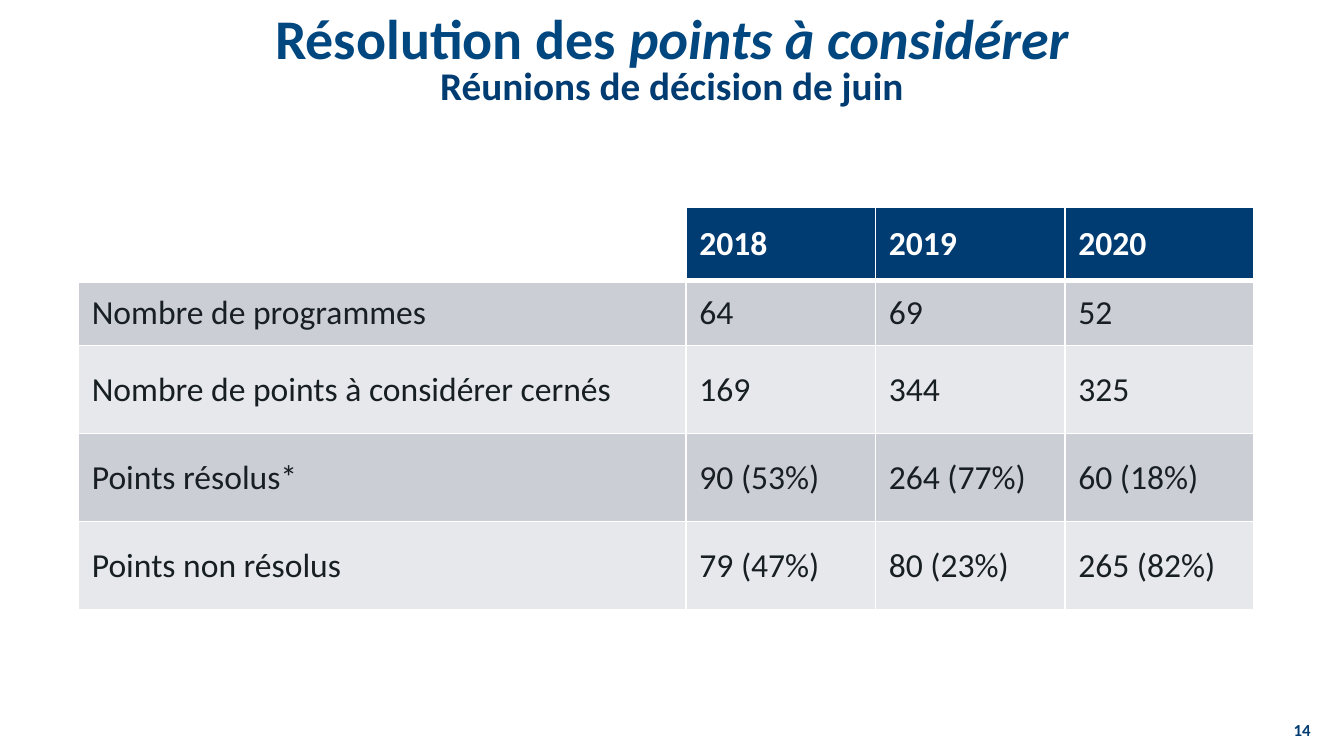
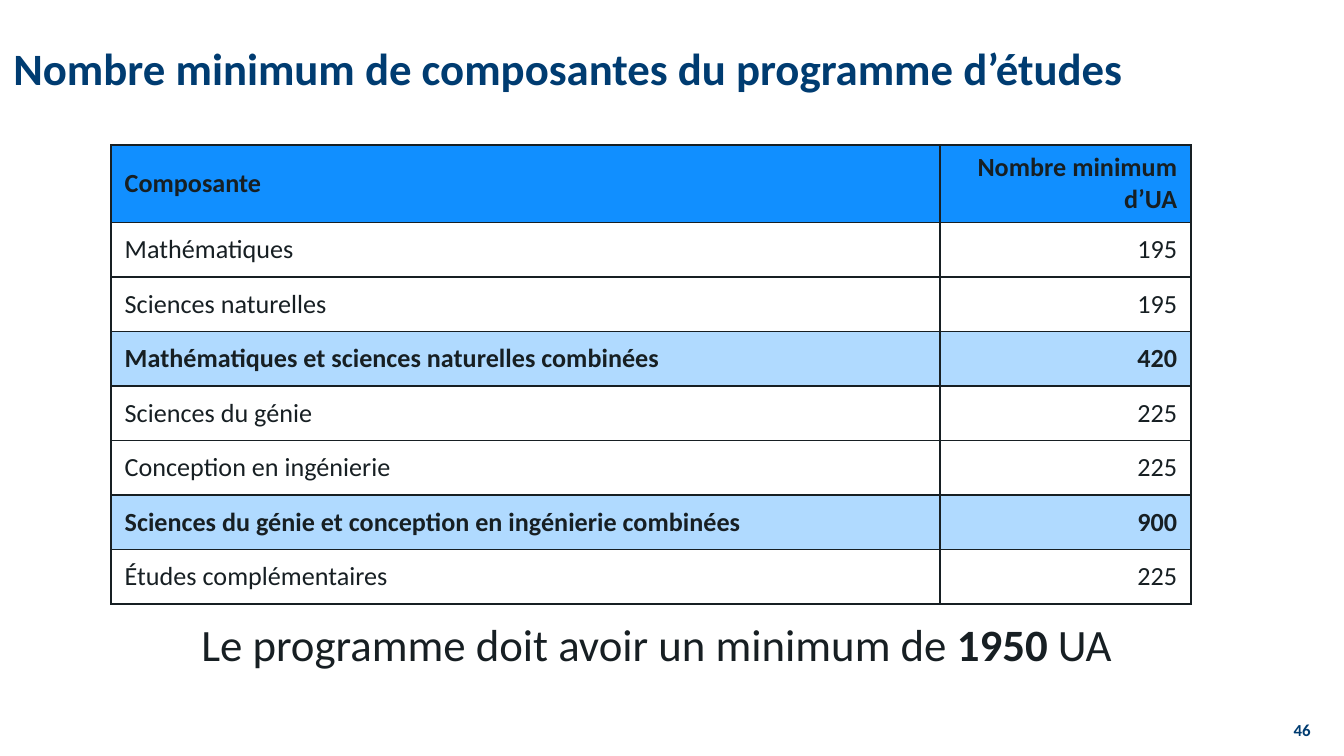
from lxml import etree
from pptx import Presentation
from pptx.dml.color import RGBColor
from pptx.enum.text import MSO_ANCHOR, MSO_AUTO_SIZE, PP_ALIGN
from pptx.oxml.ns import qn
from pptx.util import Pt

LEFT, CENTER, RIGHT = PP_ALIGN.LEFT, PP_ALIGN.CENTER, PP_ALIGN.RIGHT
TOP, MIDDLE = MSO_ANCHOR.TOP, MSO_ANCHOR.MIDDLE
FIXED = MSO_AUTO_SIZE.NONE
TITLE_ONLY, TITLE_BODY = 5, 1

COLORS = {
    "navy": "003C71", "blue": "00467F", "ink": "171F23", "white": "FFFFFF",
    "dark": "CCCED5", "light": "E7E8EB", "bright": "118FFF", "pale": "B0DAFF",
}
FONT = "Calibri"


def rgb(name):
    return RGBColor.from_string(COLORS[name])


class Deck:
    def __init__(self):
        self.prs = Presentation()
        self.prs.slide_width, self.prs.slide_height = Pt(720), Pt(405)
        self.slide = None

    def start(self, layout, number):
        self.slide = self.prs.slides.add_slide(self.prs.slide_layouts[layout])
        box = self.slide.shapes.add_textbox(0, 0, 0, 0)
        look = {"size": 9, "color": "navy", "bold": True}
        self.fill(box, (683.3, 385.2, 25.9, 11.5), [[(number, look)]], RIGHT)
        box.text_frame.margin_top = box.text_frame.margin_bottom = 0

    def line(self, par, runs, align=LEFT, gap=None):
        """Set runs of (text, look) in a paragraph."""
        form = {"alignment": align, "line_spacing": gap,
                "space_before": Pt(0), "space_after": Pt(0)}
        for key, value in form.items():
            setattr(par, key, value)
        for text, look in runs:
            run = par.add_run()
            run.text = text
            font = {"name": FONT, "bold": False, "italic": False, **look}
            font["size"] = Pt(font["size"])
            run.font.color.rgb = rgb(font.pop("color"))
            for key, value in font.items():
                setattr(run.font, key, value)

    def fill(self, shape, box, lines, align, gap=None, anchor=MIDDLE):
        """Place a shape and set one paragraph per line."""
        for key, value in zip(("left", "top", "width", "height"), box):
            setattr(shape, key, Pt(value))
        frame = shape.text_frame
        form = {"word_wrap": True, "auto_size": FIXED, "vertical_anchor": anchor}
        for key, value in form.items():
            setattr(frame, key, value)
        for i, runs in enumerate(lines):
            par = frame.add_paragraph() if i else frame.paragraphs[0]
            self.line(par, runs, align, gap)

    def title(self, box, lines, align, gap):
        self.fill(self.slide.shapes.title, box, lines, align, gap)

    def body(self, box, runs):
        shape = self.slide.placeholders[1]
        prop = shape.text_frame.paragraphs[0]._p.get_or_add_pPr()
        prop.set("marL", "0")
        prop.set("indent", "0")
        etree.SubElement(prop, qn("a:buNone"))
        self.fill(shape, box, [runs], CENTER, 1.14, TOP)

    def border(self, cell, color, widths):
        """Draw the left, right, top and bottom lines of a cell."""
        prop = cell._tc.get_or_add_tcPr()
        for side, width in zip("LRTB", widths):
            edge = etree.SubElement(prop, qn("a:ln" + side), w=str(Pt(width)))
            paint = etree.SubElement(edge, qn("a:solidFill"))
            etree.SubElement(paint, qn("a:srgbClr"), val=COLORS[color])

    def table(self, spot, cols, rows, aligns, edge, rule=1):
        """Rows are (height, fill, look, texts); rule is the line under the head."""
        high = sum(row[0] for row in rows)
        grid = self.slide.shapes.add_table(
            len(rows), len(cols), Pt(spot[0]), Pt(spot[1]),
            Pt(sum(cols)), Pt(high)).table
        grid.first_row = grid.horz_banding = False
        for col, width in zip(grid.columns, cols):
            col.width = Pt(width)
        for i, (height, tint, look, texts) in enumerate(rows):
            grid.rows[i].height = Pt(height)
            for j, text in enumerate(texts):
                cell = grid.cell(i, j)
                cell.vertical_anchor = MIDDLE
                over, under = (rule if i == k else 1 for k in (1, 0))
                self.border(cell, edge, (1, 1, over, under))
                if tint and text:
                    cell.fill.solid()
                    cell.fill.fore_color.rgb = rgb(tint)
                else:
                    cell.fill.background()
                runs = [(text, look)] if text else []
                self.line(cell.text_frame.paragraphs[0], runs, aligns[j])


def points(deck):
    deck.start(TITLE_ONLY, "14")
    head = {"size": 30, "color": "blue", "bold": True}
    sub = {"size": 21, "color": "navy", "bold": True}
    deck.title((54, 4.3, 612, 58.3), [
        [("Résolution des ", head),
         ("points à considérer", {**head, "italic": True})],
        [("Réunions de décision de juin", sub)],
    ], CENTER, 0.8)
    top = {"size": 18, "color": "white", "bold": True}
    text = {"size": 18, "color": "ink"}
    data = [
        ("Nombre de programmes", "64", "69", "52"),
        ("Nombre de points à considérer cernés", "169", "344", "325"),
        ("Points résolus*", "90 (53%)", "264 (77%)", "60 (18%)"),
        ("Points non résolus", "79 (47%)", "80 (23%)", "265 (82%)"),
    ]
    rows = [(38.9, "navy", top, ("", "2018", "2019", "2020"))]
    for i, texts in enumerate(data):
        tint = "light" if i % 2 else "dark"
        rows.append((47.2 if i else 35, tint, text, texts))
    deck.table((42, 111.2), [325.5] + [101.5] * 3, rows, [LEFT] * 4, "white", 3)


def units(deck):
    deck.start(TITLE_BODY, "46")
    head = {"size": 24, "color": "navy", "bold": True}
    deck.title((0, 4.3, 720, 67.7), [
        [("Nombre minimum de composantes du programme d’études", head)],
    ], LEFT, 0.9)
    text = {"size": 24, "color": "ink"}
    deck.body((20.2, 322.6, 663, 49.7), [
        ("Le programme doit avoir un minimum de ", text),
        ("1950", {**text, "bold": True}),
        (" UA", text),
    ])
    cell = {"size": 14, "color": "ink"}
    bold = {**cell, "bold": True}
    data = [
        ("Mathématiques", "195"),
        ("Sciences naturelles", "195"),
        ("Mathématiques et sciences naturelles combinées", "420"),
        ("Sciences du génie", "225"),
        ("Conception en ingénierie", "225"),
        ("Sciences du génie et conception en ingénierie combinées", "900"),
        ("Études complémentaires", "225"),
    ]
    rows = [(41.4, "bright", bold, ("Composante", "Nombre minimum d’UA"))]
    for i, texts in enumerate(data, 1):
        total = i % 3 == 0
        rows.append((29.2, "pale" if total else None,
                     bold if total else cell, texts))
    deck.table((59.6, 77.8), [444, 134.3], rows, [LEFT, RIGHT], "ink")


def main():
    deck = Deck()
    points(deck)
    units(deck)
    deck.prs.save("out.pptx")


if __name__ == "__main__":
    main()
